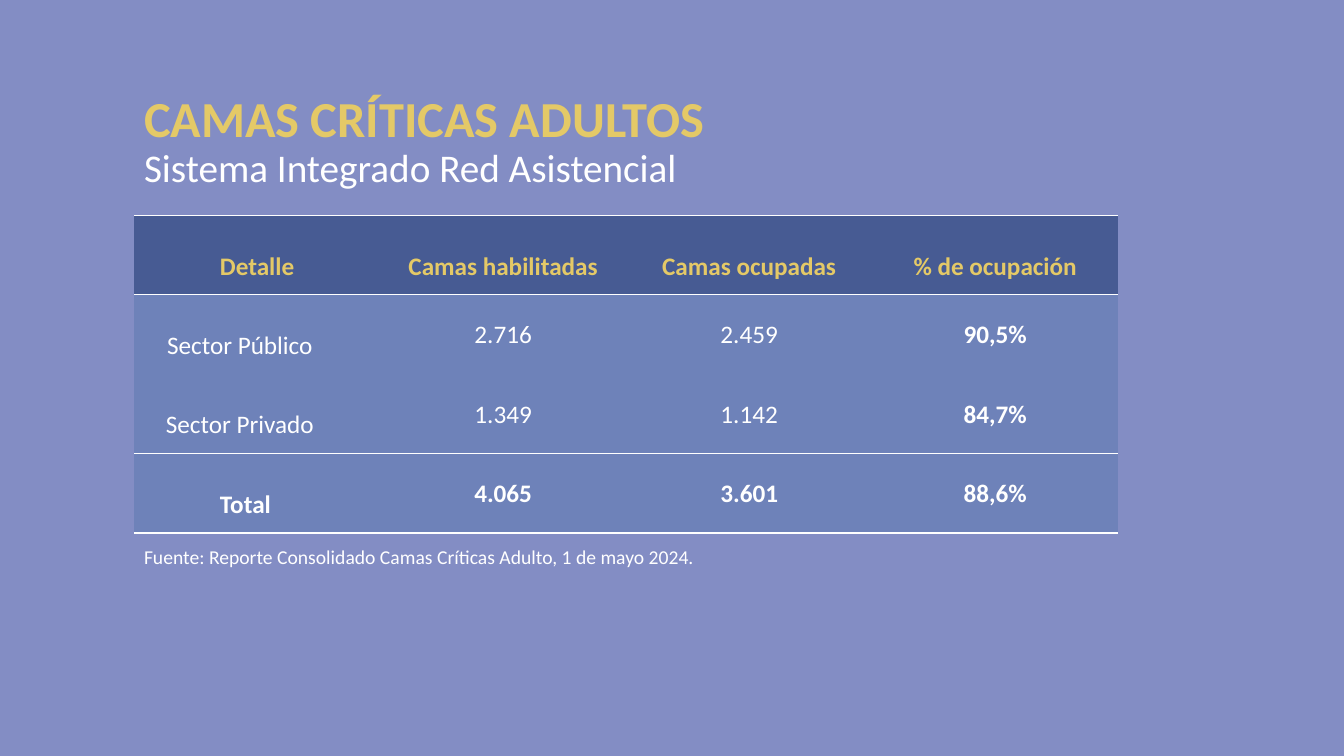
from pptx import Presentation
from pptx.dml.color import RGBColor
from pptx.enum import text
from pptx.oxml import parse_xml
from pptx.oxml.ns import nsdecls
from pptx.util import Cm, Pt

FONT = "Calibri"
GOLD, WHITE = "E4C967", "FFFFFF"
BACKGROUND, HEADER_FILL, BODY_FILL = "838DC4", "475B93", "6E82B9"

HEADERS = ["Detalle", "Camas habilitadas", "Camas ocupadas", "% de ocupación"]
ROWS = [
    ["Sector Público", "2.716", "2.459", "90,5%"],
    ["Sector Privado", "1.349", "1.142", "84,7%"],
    ["Total", "4.065", "3.601", "88,6%"],
]
RULED_EDGES = {0, 1, 3, 4}  # horizontal grid lines that are drawn


def color(hex_string):
    return RGBColor.from_string(hex_string)


def add_span(para, words, size, hex_string, bold=False):
    span = para.add_run()
    span.text = words
    span.font.name = FONT
    span.font.size = Pt(size)
    span.font.bold = bold
    span.font.color.rgb = color(hex_string)


def add_text_box(page, box, anchor):
    frame = page.shapes.add_textbox(*box).text_frame
    frame.word_wrap = True
    frame.vertical_anchor = anchor
    return frame.paragraphs[0]


def add_heading(page, box):
    para = add_text_box(page, box, text.MSO_ANCHOR.MIDDLE)
    para.line_spacing = 0.9
    add_span(para, "CAMAS CRÍTICAS ADULTOS", 36, GOLD, bold=True)
    para.add_line_break()
    add_span(para, "Sistema Integrado Red Asistencial", 28, WHITE)


def add_source_note(page, box):
    para = add_text_box(page, box, text.MSO_ANCHOR.TOP)
    add_span(para, "Fuente: Reporte Consolidado Camas Críticas Adulto, 1 de mayo 2024.", 14, WHITE)


def set_borders(cell, row):
    # Borders come before the fill in the cell properties
    properties = cell._tc.get_or_add_tcPr()
    ruled = {"lnL": False, "lnR": False,
             "lnT": row in RULED_EDGES, "lnB": row + 1 in RULED_EDGES}
    for position, (tag, visible) in enumerate(ruled.items()):
        paint = (f'<a:solidFill><a:srgbClr val="{WHITE}"/></a:solidFill>'
                 if visible else "<a:noFill/>")
        properties.insert(position, parse_xml(
            f'<a:{tag} {nsdecls("a")} w="{Pt(1)}">{paint}</a:{tag}>'))


def set_margins(cell, left, top, right):
    cell.margin_left, cell.margin_top = Cm(left), Cm(top)
    cell.margin_right, cell.margin_bottom = Cm(right), Cm(0)


def fill_cell(cell, words, row, column):
    header, total = row == 0, row == len(ROWS)
    cell.fill.solid()
    cell.fill.fore_color.rgb = color(HEADER_FILL if header else BODY_FILL)
    set_borders(cell, row)
    cell.vertical_anchor = text.MSO_ANCHOR.MIDDLE
    para = cell.text_frame.paragraphs[0]
    para.alignment = text.PP_ALIGN.CENTER
    if header or column == 0:
        para.line_spacing = 1.07
        # Sector names sit a little further left than the total
        right = 0.05 if header else 0.64 if total else 0.92
        set_margins(cell, 0.05, 0.51, right)
    else:
        set_margins(cell, 0.03, 0.03, 0.03)
    bold = header or total or column == len(HEADERS) - 1
    add_span(para, words, 18, GOLD if header else WHITE, bold)


def add_bed_table(page, box):
    grid = [HEADERS] + ROWS
    table = page.shapes.add_table(len(grid), len(HEADERS), *box).table
    table.horz_banding = False
    for row, values in enumerate(grid):
        for column, words in enumerate(values):
            fill_cell(table.cell(row, column), words, row, column)


def main():
    deck = Presentation()
    deck.slide_width, deck.slide_height = Cm(33.87), Cm(19.05)
    page = deck.slides.add_slide(deck.slide_layouts[6])
    page.background.fill.solid()
    page.background.fill.fore_color.rgb = color(BACKGROUND)

    left = Cm(3.38)
    add_heading(page, (left, Cm(1.75), Cm(29.21), Cm(3.68)))
    add_bed_table(page, (left, Cm(5.43), Cm(24.8), Cm(8)))
    add_source_note(page, (left, Cm(13.61), Cm(26.34), Cm(0.86)))
    deck.save("out.pptx")


if __name__ == "__main__":
    main()
